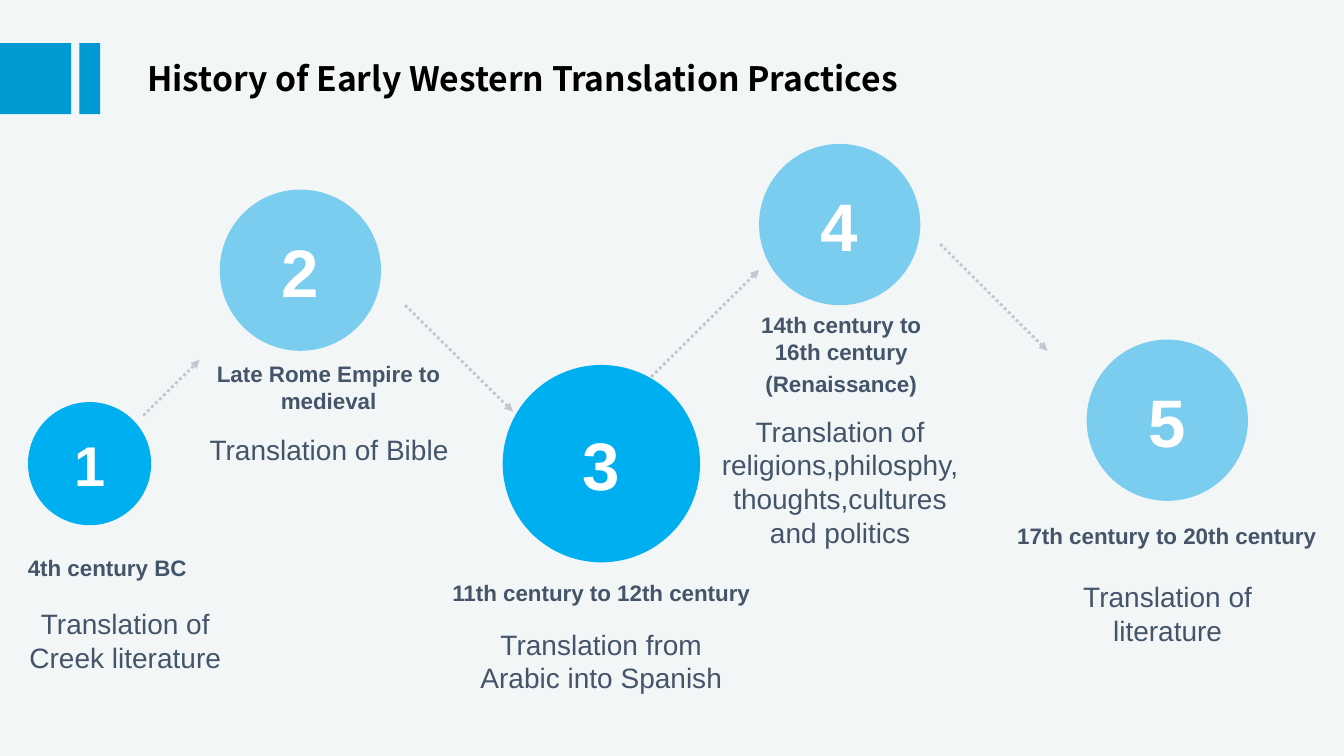
from lxml.etree import SubElement
from pptx import Presentation
from pptx.dml.color import RGBColor
from pptx.enum.dml import MSO_LINE
from pptx.enum.shapes import MSO_CONNECTOR, MSO_SHAPE
from pptx.enum.text import MSO_ANCHOR, PP_ALIGN
from pptx.oxml.ns import qn
from pptx.util import Pt

COLORS = {
    "background": "F3F6F7",
    "title": "000000",
    "marker": "0099D1",
    "strong": "00AFF0",
    "soft": "7ACDEF",
    "number": "FFFFFF",
    "text": "445469",
    "arrow": "C1C7D0",
}


class TimelineSlide:
    """Style and drawing methods for the timeline slide."""

    body_font = "Arial"
    title_font = "Noto Sans CJK SC"

    def __init__(self, presentation):
        self.slide = presentation.slides.add_slide(presentation.slide_layouts[5])
        self.shapes = self.slide.shapes
        self.paint(self.slide.background.fill, "background")

    def paint(self, fill, color):
        fill.solid()
        fill.fore_color.rgb = RGBColor.from_string(COLORS[color])

    def add_text_run(self, paragraph, text, size, color, bold=True, font=body_font):
        run = paragraph.add_run()
        run.text = text
        run.font.size = Pt(size)
        run.font.name = font
        run.font.bold = bold
        run.font.color.rgb = RGBColor.from_string(COLORS[color])
        if font == self.title_font:
            SubElement(run.font._element, qn("a:ea")).set("typeface", font)

    def title(self, text, left, top, width, height):
        title = self.shapes.title
        title.left, title.top, title.width, title.height = map(Pt, (left, top, width, height))
        title.text_frame.vertical_anchor = MSO_ANCHOR.MIDDLE
        paragraph = title.text_frame.paragraphs[0]
        paragraph.alignment = PP_ALIGN.LEFT
        self.add_text_run(paragraph, text, 24, "title", font=self.title_font)

    def shape(self, kind, left, top, width, height, color):
        shape = self.shapes.add_shape(kind, Pt(left), Pt(top), Pt(width), Pt(height))
        shape.shadow.inherit = False
        shape.line.fill.background()
        self.paint(shape.fill, color)
        return shape

    def circle(self, number, center_x, center_y, diameter, size, color):
        radius = diameter / 2
        circle = self.shape(MSO_SHAPE.OVAL, center_x - radius, center_y - radius,
                            diameter, diameter, color)
        circle.text_frame.vertical_anchor = MSO_ANCHOR.MIDDLE
        paragraph = circle.text_frame.paragraphs[0]
        paragraph.alignment = PP_ALIGN.CENTER
        self.add_text_run(paragraph, str(number), size, "number")

    def text(self, lines, left, top, width, height, size, bold):
        box = self.shapes.add_textbox(Pt(left), Pt(top), Pt(width), Pt(height))
        frame = box.text_frame
        frame.word_wrap = True
        frame.margin_left = frame.margin_right = frame.margin_top = frame.margin_bottom = 0
        for index, line in enumerate(lines):
            paragraph = frame.add_paragraph() if index else frame.paragraphs[0]
            paragraph.alignment = PP_ALIGN.CENTER
            if index:
                paragraph.space_before = Pt(size * 0.2)
            self.add_text_run(paragraph, line, size, "text", bold)

    def arrow(self, start_x, start_y, end_x, end_y):
        arrow = self.shapes.add_connector(MSO_CONNECTOR.STRAIGHT, Pt(start_x), Pt(start_y),
                                          Pt(end_x), Pt(end_y))
        arrow.line.width = Pt(2)
        arrow.line.color.rgb = RGBColor.from_string(COLORS["arrow"])
        arrow.line.dash_style = MSO_LINE.ROUND_DOT
        properties = arrow._element.spPr
        SubElement(properties.find(qn("a:ln")), qn("a:tailEnd")).set("type", "triangle")
        SubElement(properties, qn("a:effectLst"))


# Circle: center x, center y, diameter, number size, color
# Period and event: lines, left, top, width, height
STAGES = [
    ((64, 331.2, 88, 40, "strong"),
     (["4th century BC"], 10, 396, 133.2, 19.4),
     (["Translation of Creek literature"], 0.5, 433.4, 178, 48.5)),
    ((214.6, 193, 115.2, 48, "soft"),
     (["Late Rome Empire to medieval"], 151.2, 257.2, 167, 38.8),
     (["Translation of Bible"], 143.3, 308.9, 183.6, 24.2)),
    ((429.6, 331.2, 141, 48, "strong"),
     (["11th century to 12th century"], 316.8, 414, 225.4, 19.4),
     (["Translation from Arabic into Spanish"], 335.5, 448, 188, 48.5)),
    ((599.8, 160.4, 115.2, 48, "soft"),
     (["14th century to 16th century", "(Renaissance)"], 529.2, 222.5, 143.3, 62),
     (["Translation of religions,philosphy, thoughts,cultures and politics"],
      507.6, 296, 185, 97)),
    ((833.8, 300.2, 115.2, 48, "soft"),
     (["17th century to 20th century"], 720.7, 373, 225.4, 19.4),
     (["Translation of literature"], 741.6, 414, 185, 48.5)),
]

ARROWS = [
    (102.4, 296.8, 142.6, 257),
    (289.4, 218, 366.4, 294),
    (465.2, 269.2, 542.2, 192.8),
    (671.6, 174.4, 748.2, 250.6),
]


def main():
    presentation = Presentation()
    presentation.slide_width, presentation.slide_height = Pt(960), Pt(540)
    timeline = TimelineSlide(presentation)

    # Title with its two marker blocks
    for left, width in ((0, 50.8), (56.8, 14.8)):
        timeline.shape(MSO_SHAPE.RECTANGLE, left, 30.8, width, 50.8, "marker")
    timeline.title("History of Early Western Translation Practices", 98, 38, 574, 36)

    # Arrows between the stages
    for points in ARROWS:
        timeline.arrow(*points)

    # Stages: numbered circle, period and event
    for number, (circle, period, event) in enumerate(STAGES, 1):
        timeline.circle(number, *circle)
        timeline.text(*period, size=16, bold=True)
        timeline.text(*event, size=20, bold=False)

    presentation.save("out.pptx")


if __name__ == "__main__":
    main()
